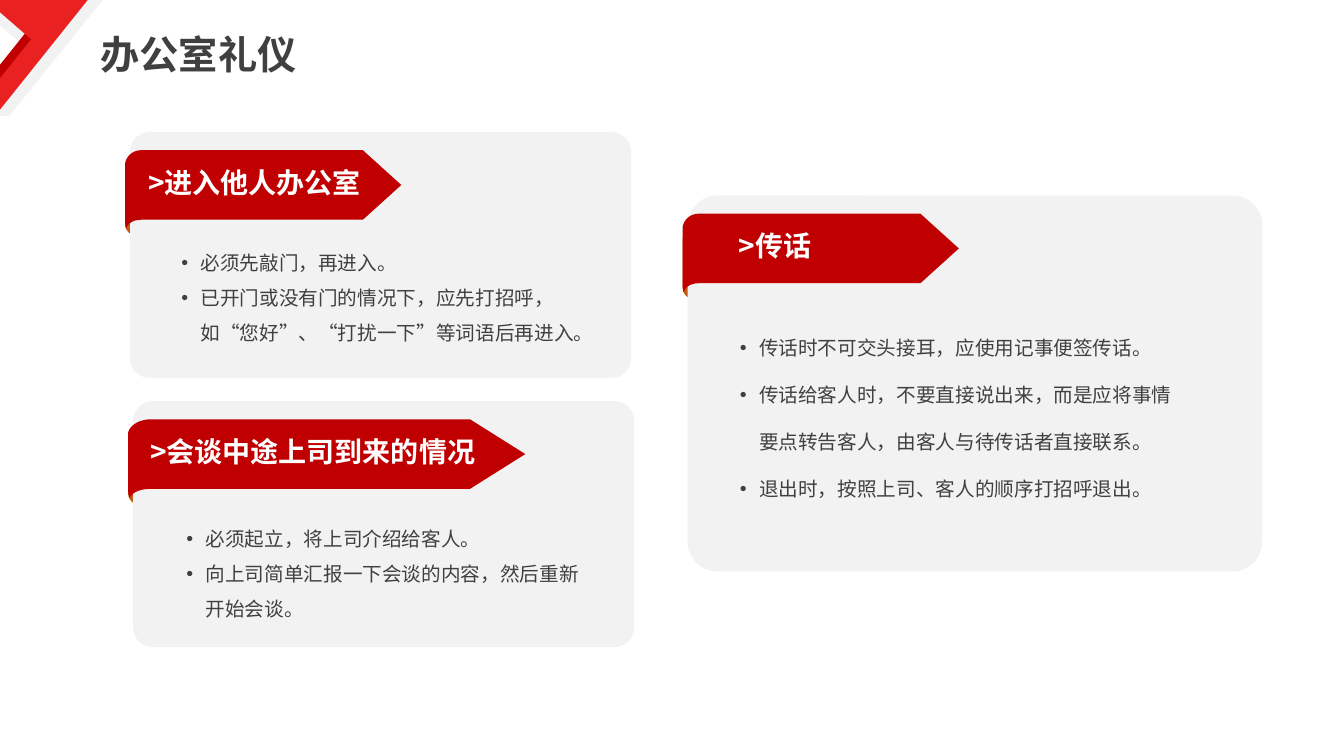
"""Build the office etiquette slide: three tagged cards under a corner ornament."""
from lxml import etree
from pptx import Presentation, util as u
from pptx.dml.color import RGBColor
from pptx.enum import shapes as kinds, text as txt
from pptx.oxml import ns

THEME = {
    "font": "Noto Sans CJK SC",
    "title": 28, "heading": 20, "body": 14,
    "ink": "404040", "paper": "FFFFFF", "card": "F2F2F2",
    "deep": "C00000", "bright": "E92121", "fold": "C55A11",
}

deck = Presentation()
deck.slide_width, deck.slide_height = u.Inches(13.33), u.Inches(7.5)
slide = deck.slides.add_slide(deck.slide_layouts[6])
ROW = deck.slide_height / 75
CARD_INSET, TAG_DROP, FOLD_DROP = 0.5, 1.8, 3.2


def paint(outline, colour, box=None, adjust=None):
    """Draw a preset in a grid box, or a polygon through grid points, in one flat colour."""
    if box:
        part = slide.shapes.add_shape(outline, *(round(n * ROW) for n in box))
    else:
        points = [(round(x * ROW), round(y * ROW)) for x, y in outline]
        pen = slide.shapes.build_freeform(*points[0])
        pen.add_line_segments(points[1:], close=True)
        part = pen.convert_to_shape()
    if adjust is not None:
        part.adjustments[0] = adjust
    part.fill.solid()
    part.fill.fore_color.rgb = RGBColor.from_string(THEME[colour])
    part.line.fill.background()
    part.shadow.inherit = False
    return part


def write(box, lines, size, colour, bold=False, wrap=True, spacing=None):
    """Write paragraphs in a grid box; a line spacing makes them a bulleted list."""
    frame = slide.shapes.add_textbox(*(round(n * ROW) for n in box)).text_frame
    frame.word_wrap = wrap
    frame.auto_size = txt.MSO_AUTO_SIZE.SHAPE_TO_FIT_TEXT
    frame.text = "\n".join(lines)
    for paragraph in frame.paragraphs:
        if spacing:
            paragraph.line_spacing = spacing
            layout = paragraph._p.get_or_add_pPr()
            layout.set("marL", str(u.Inches(0.19)))
            layout.set("indent", str(-u.Inches(0.19)))
            etree.SubElement(layout, ns.qn("a:buFont")).set("typeface", "Arial")
            etree.SubElement(layout, ns.qn("a:buChar")).set("char", "•")
        for run in paragraph.runs:
            run.font.name = THEME["font"]
            run.font.size = u.Pt(THEME[size])
            run.font.bold = bold
            run.font.color.rgb = RGBColor.from_string(THEME[colour])
            props = run._r.get_or_add_rPr()
            props.set("lang", "zh-CN")
            etree.SubElement(props, ns.qn("a:ea")).set("typeface", THEME["font"])


paint(kinds.MSO_SHAPE.PARALLELOGRAM, "card", (-0.9, 0, 11.1, 11.5), 0.836)
corner = paint(kinds.MSO_SHAPE.RIGHT_TRIANGLE, "card", (-3.1, 0, 6.7, 5.5))
corner_frame = corner._element.spPr.find(ns.qn("a:xfrm"))
corner_frame.set("flipH", "1")
corner_frame.set("flipV", "1")
paint([(4.1, 1.3), (6.3, 1.3), (0.9, 8.1), (1.3, 8.5), (-1, 11.5), (-4.1, 11.5), (-1.9, 8.8)], "deep")
paint([(-1.4, 0), (8.7, 0), (6.3, 3), (-0.5, 11.5), (-3, 11.5), (3.1, 3.9)], "bright")

TAG_CURVES = [
    [(0.058, 6.9), (0.033, 6.9), (0.011, 7.2), (0.004, 7.8)],
    [(0, 1.5), (0, 0.7), (0.026, 0), (0.058, 0)],
]
STEPS = 10
tag_outline = [(0.861, 0), (1, 3.45), (0.861, 6.9)]
for curve in TAG_CURVES:
    for step in range(STEPS + 1):
        t = step / STEPS
        weights = ((1 - t) ** 3, 3 * t * (1 - t) ** 2, 3 * t * t * (1 - t), t ** 3)
        tag_outline.append(tuple(sum(k * p[axis] for k, p in zip(weights, curve)) for axis in (0, 1)))
    if curve is TAG_CURVES[0]:
        tag_outline.append((0, 7.2))

topics = [
    {"left": 12.4, "top": 13.1, "card": (49.7, 24.4), "tag": 27.4,
     "heading": ">进入他人办公室", "heading_at": (13.7, 24.1),
     "body_box": (17, 23.2, 41.5, 11.2), "spacing": 1.5,
     "rules": ["必须先敲门，再进入。",
               "已开门或没有门的情况下，应先打招呼，如“您好”、“打扰一下”等词语后再进入。"]},
    {"left": 67.7, "top": 19.4, "card": (57, 37.3), "tag": 27.4,
     "heading": ">传话", "heading_at": (72.3, 12.1),
     "body_box": (72.4, 30.5, 46.2, 19.1), "spacing": 2.0,
     "rules": ["传话时不可交头接耳，应使用记事便签传话。",
               "传话给客人时，不要直接说出来，而是应将事情要点转告客人，由客人与待传话者直接联系。",
               "退出时，按照上司、客人的顺序打招呼退出。"]},
    {"left": 12.7, "top": 39.8, "card": (49.7, 24.4), "tag": 39.4,
     "heading": ">会谈中途上司到来的情况", "heading_at": (13.9, 35),
     "body_box": (17.5, 50.6, 41.5, 11.2), "spacing": 1.5,
     "rules": ["必须起立，将上司介绍给客人。",
               "向上司简单汇报一下会谈的内容，然后重新开始会谈。"]},
]

for topic in topics:
    left, top = topic["left"], topic["top"]
    paint(kinds.MSO_SHAPE.ROUNDED_RECTANGLE, "fold", (left, top + FOLD_DROP, 11.3, 7.1), 0.167)
    paint(kinds.MSO_SHAPE.ROUNDED_RECTANGLE, "card", (left + CARD_INSET, top, *topic["card"]), 0.08)
    paint([(left + x * topic["tag"], top + TAG_DROP + y) for x, y in tag_outline], "deep")
    heading_left, heading_width = topic["heading_at"]
    write((heading_left, top + TAG_DROP + 1, heading_width, 4.4), [topic["heading"]],
          "heading", "paper", bold=True)
    write(topic["body_box"], topic["rules"], "body", "ink", spacing=topic["spacing"])

write((9, 2.5, 21.7, 5.7), ["办公室礼仪"], "title", "ink", bold=True, wrap=False)

deck.save("out.pptx")
